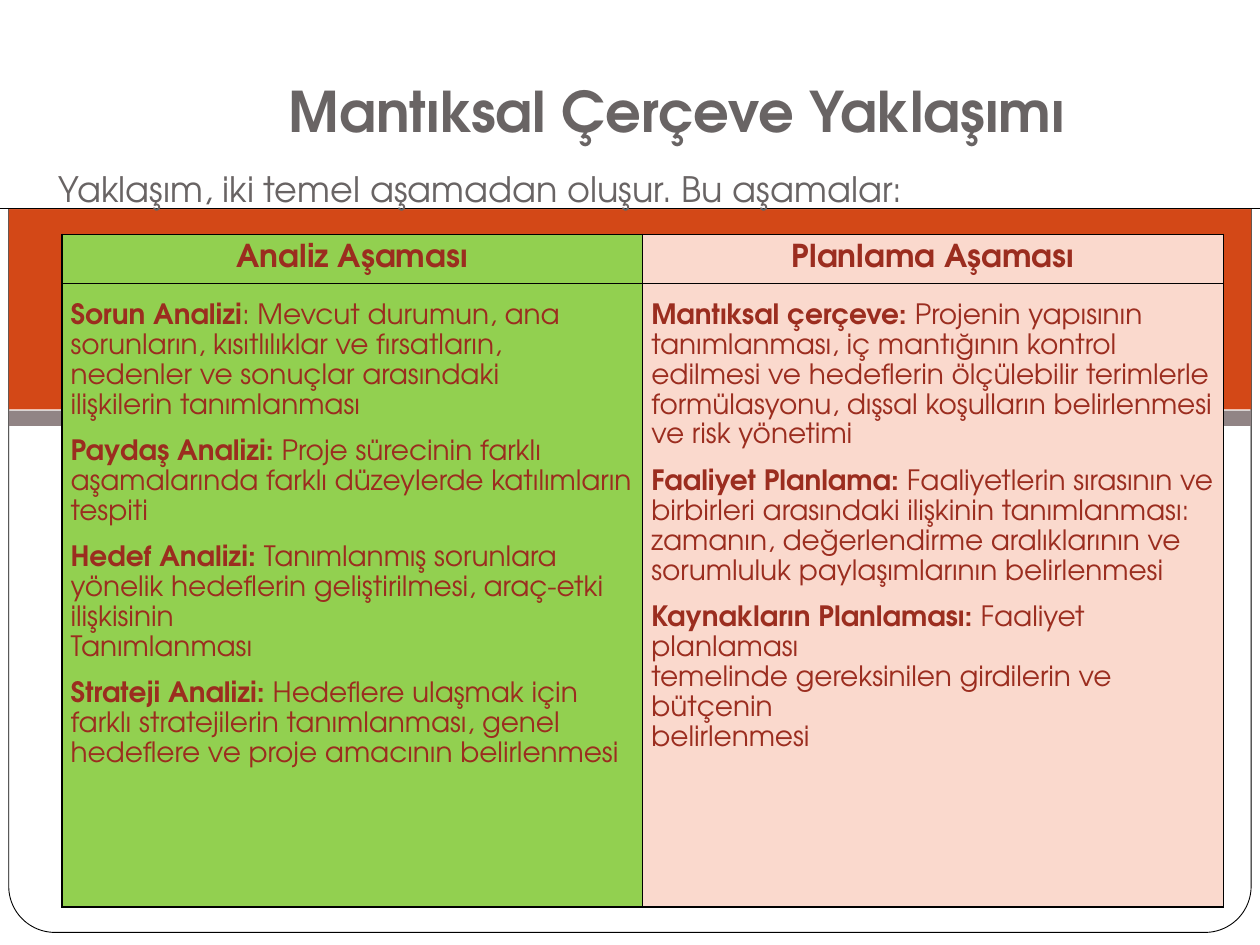
from pptx import Presentation
from pptx.dml.color import RGBColor
from pptx.enum.shapes import MSO_CONNECTOR, MSO_SHAPE
from pptx.enum.text import MSO_ANCHOR as Anchor, PP_ALIGN as Align
from pptx.oxml import parse_xml
from pptx.oxml.ns import nsdecls
from pptx.util import Inches, Pt

FONT = "TeX Gyre Adventor"
GREY, RUST, BLACK, WHITE = "696464", "9B2D1F", "000000", "FFFFFF"
TITLE = "Mantıksal Çerçeve Yaklaşımı"
INTRO = "Yaklaşım, iki temel aşamadan oluşur. Bu aşamalar:"
PHASES = [
    ("Analiz Aşaması", "92D050", [
        ("Sorun Analizi", [
            ": Mevcut durumun, ana",
            "sorunların, kısıtlılıklar ve fırsatların,",
            "nedenler ve sonuçlar arasındaki",
            "ilişkilerin tanımlanması"]),
        ("Paydaş Analizi: ", [
            "Proje sürecinin farklı aşamalarında farklı düzeylerde katılımların tespiti"]),
        ("Hedef Analizi: ", [
            "Tanımlanmış sorunlara yönelik hedeflerin geliştirilmesi, araç-etki ilişkisinin",
            "Tanımlanması"]),
        ("Strateji Analizi: ", [
            "Hedeflere ulaşmak için",
            "farklı stratejilerin tanımlanması, genel",
            "hedeflere ve proje amacının belirlenmesi"]),
    ]),
    ("Planlama Aşaması", "FAD9CD", [
        ("Mantıksal çerçeve: ", [
            "Projenin yapısının tanımlanması, iç mantığının kontrol edilmesi ve hedeflerin "
            "ölçülebilir terimlerle formülasyonu, dışsal koşulların belirlenmesi ve risk yönetimi"]),
        ("Faaliyet Planlama: ", [
            "Faaliyetlerin sırasının ve birbirleri arasındaki ilişkinin tanımlanması: zamanın, "
            "değerlendirme aralıklarının ve sorumluluk paylaşımlarının belirlenmesi"]),
        ("Kaynakların Planlaması: ", [
            "Faaliyet planlaması",
            "temelinde gereksinilen girdilerin ve bütçenin",
            "belirlenmesi"]),
    ]),
]


def rgb(color):
    """Turn a hex string into a colour."""
    return RGBColor.from_string(color)


def format_run(run, size, color, bold=False):
    """Set the font of a run."""
    font = run.font
    font.name, font.size, font.bold = FONT, Pt(size), bold
    font.color.rgb = rgb(color)


def add_panel(slide, box, fill, preset=MSO_SHAPE.RECTANGLE):
    """Add a plain filled shape without outline."""
    panel = slide.shapes.add_shape(preset, *box)
    panel.shadow.inherit = False
    panel.fill.solid()
    panel.fill.fore_color.rgb = rgb(fill)
    panel.line.fill.background()
    return panel


def add_backdrop(slide, left, top, width, height):
    """Draw the rounded frame, its bands and the white heading area."""
    frame = add_panel(slide, (left, top, width, height), WHITE, MSO_SHAPE.ROUNDED_RECTANGLE)
    frame.adjustments[0] = 0.05
    frame.line.color.rgb = rgb(BLACK)
    frame.line.width = Pt(0.5)
    for offset, depth, color in ((1.5, 1.67, "D34817"), (1.45, 0.13, "E6B1AC"),
                                 (3.18, 0.12, "918485")):
        add_panel(slide, (left, top + Inches(offset), width, Inches(depth)), color)
    rule_top = top + Inches(1.57)
    rule = slide.shapes.add_connector(MSO_CONNECTOR.STRAIGHT, Inches(-0.02), rule_top,
                                      Inches(10.03), rule_top)
    rule.line.color.rgb = rgb(BLACK)
    rule.line.width = Pt(1)
    rule.element.spPr.append(parse_xml(f"<a:effectLst {nsdecls('a')}/>"))
    return add_panel(slide, (0, 0, Inches(10.04), rule_top), WHITE)


def add_heading(slide, heading_area, left, top, width, height):
    """Place the title above the heading area, and the introduction below it."""
    title = slide.shapes.title
    heading_area.element.addnext(title.element)
    title.left, title.top, title.width, title.height = left, top, width, height
    intro = slide.shapes.add_textbox(left - Inches(1.58), top + Inches(0.73),
                                     Inches(8.03), Inches(0.44))
    for block, words, size, bold, align in ((title, TITLE, 32, True, Align.CENTER),
                                            (intro, INTRO, 20, False, Align.LEFT)):
        frame = block.text_frame
        frame.text = words
        frame.word_wrap = True
        frame.vertical_anchor = Anchor.MIDDLE if bold else Anchor.TOP
        frame.paragraphs[0].alignment = align
        format_run(frame.paragraphs[0].runs[0], size, GREY, bold)


def style_cell(cell, fill):
    """Give a cell its borders, fill and margins."""
    properties = cell._tc.get_or_add_tcPr()
    for side in ("lnL", "lnR", "lnT", "lnB"):
        properties.append(parse_xml(
            f'<a:{side} {nsdecls("a")} w="12700"><a:solidFill><a:srgbClr val="{BLACK}"/>'
            f"</a:solidFill></a:{side}>"))
    cell.fill.solid()
    cell.fill.fore_color.rgb = rgb(fill)
    cell.margin_left = cell.margin_right = Inches(0.07)
    cell.margin_top = cell.margin_bottom = 0


def fill_steps(cell, steps):
    """Write the steps of a phase, each with a bold term."""
    frame = cell.text_frame
    cell.margin_top = Inches(0.13)
    paragraph = frame.paragraphs[0]
    for step, (term, lines) in enumerate(steps):
        for row, line in enumerate(lines):
            if step or row:
                paragraph = frame.add_paragraph()
            paragraph.line_spacing = Pt(17.1)
            paragraph.space_before = Pt(9.4 if step and not row else 0)
            for words, bold in ((term, True), (line, False)):
                if row and bold:
                    continue
                run = paragraph.add_run()
                run.text = words
                format_run(run, 16, RUST, bold)


def add_phase_table(slide, left, top, width, height):
    """Add the table with one column for each phase."""
    table = slide.shapes.add_table(2, len(PHASES), left, top, width, height).table
    table.rows[0].height = Inches(0.39)
    table.rows[1].height = height - Inches(0.39)
    for column, (phase, fill, steps) in enumerate(PHASES):
        header, body = table.cell(0, column), table.cell(1, column)
        for cell in (header, body):
            style_cell(cell, fill)
        header.vertical_anchor = Anchor.MIDDLE
        header.text_frame.text = phase
        paragraph = header.text_frame.paragraphs[0]
        paragraph.alignment = Align.CENTER
        format_run(paragraph.runs[0], 18, RUST, True)
        fill_steps(body, steps)


def main():
    """Build and save the slide."""
    deck = Presentation()
    deck.slide_width, deck.slide_height = Inches(10), Inches(7.5)
    slide = deck.slides.add_slide(deck.slide_layouts[5])
    heading_area = add_backdrop(slide, Inches(0.07), Inches(0.08), Inches(9.86), Inches(7.32))
    add_heading(slide, heading_area, Inches(1.95), Inches(0.55), Inches(6.85), Inches(0.64))
    add_phase_table(slide, Inches(0.49), Inches(1.86), Inches(9.22), Inches(5.34))
    deck.save("out.pptx")


if __name__ == "__main__":
    main()
